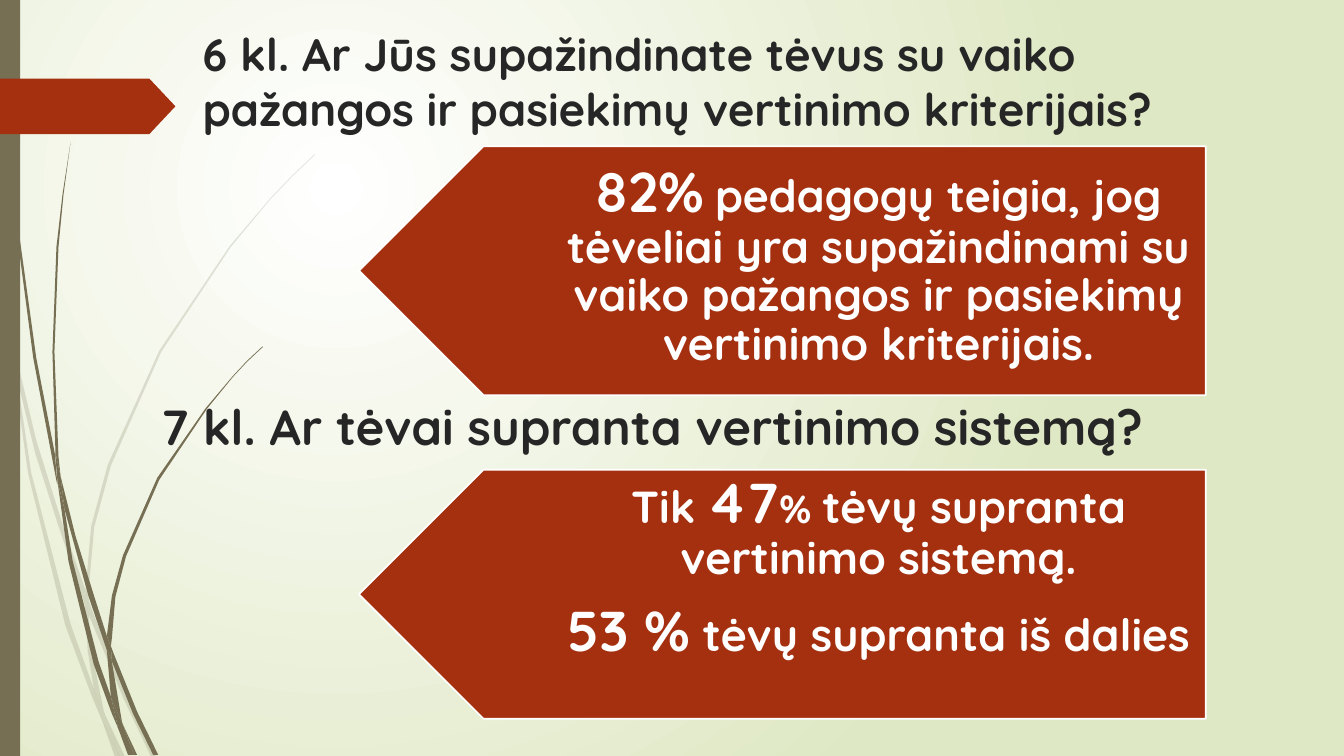
from dataclasses import dataclass

import pptx
import pptx.dml.color
import pptx.enum.shapes
import pptx.enum.text
import pptx.oxml.ns
import pptx.util
from lxml import etree

# Fine grid of square cells; every length below counts its columns and rows
COLUMNS, ROWS = 1333, 750
FONT = "Quicksand"
RUST, OLIVE, INK, WHITE = "A53010", "766F54", "262626", "FFFFFF"
SHAPES = pptx.enum.shapes.MSO_SHAPE
ALIGN = pptx.enum.text.PP_ALIGN
ANCHOR = pptx.enum.text.MSO_ANCHOR


@dataclass
class Box:
    left: float
    top: float
    width: float
    height: float


@dataclass
class TextRun:
    text: str
    size: float
    color: str = WHITE


@dataclass
class Answer:
    arrow_row: float
    text_row: float
    paragraphs: list[list[TextRun]]


@dataclass
class Tuft:
    """Grass segments, each an outline of (column, row) corners."""
    opacity: int
    segments: list[list[tuple[float, float]]]


PALE_GRASS = Tuft(20, [
    [(11, 350), (9, 322), (0, 282), (0, 299), (10, 344)],
    [(58, 522), (84, 599), (85, 586), (62, 520), (36, 437), (14, 345), (17, 376), (35, 450)],
    [(92, 607), (88, 596), (88, 610), (123, 694), (150, 751), (155, 751), (127, 692)],
    [(119, 751), (124, 751), (105, 711)],
    [(93, 683), (70, 619), (31, 469), (17, 376), (11, 350), (28, 470), (65, 621),
     (92, 693), (101, 714), (99, 707)],
    [(84, 599), (87, 646), (93, 683), (96, 692), (105, 711), (103, 706), (91, 646),
     (88, 610), (88, 608)],
    [(88, 584), (93.5, 523), (110, 462), (160, 349), (229, 245), (268, 198), (290, 175),
     (312, 154), (312, 153), (289, 175), (268, 197), (228, 244), (158, 348), (107, 461),
     (90.5, 522), (85, 584), (85, 586), (88, 596)],
    [(101, 714), (114, 751), (119, 751)],
    [(88, 608), (88, 610), (88, 596), (85, 586), (84, 599)],
    [(96, 692), (93, 683), (99, 707), (101, 714), (119, 751), (105, 711)],
])
DARK_GRASS = Tuft(100, [
    [(7, 110), (17, 233), (33, 355), (56, 477), (57, 481), (55, 457), (55, 453),
     (36, 355), (19, 232), (8, 109), (5, 48), (4, 0), (3, 0), (4, 48)],
    [(88, 592), (106, 645), (106, 633), (106, 631), (93, 590), (75, 532), (60, 472),
     (64, 505)],
    [(113, 649), (110, 641), (111, 656), (132, 708), (152, 749), (157, 749), (136, 706)],
    [(110, 691), (98, 657), (72, 556), (64, 505), (57, 477), (68, 557), (93, 659),
     (111, 708), (117, 722), (116, 717)],
    [(60, 472), (58, 453), (54, 349), (58, 245), (63, 193), (70, 141), (62, 193),
     (56, 245), (52, 349), (55, 449)],
    [(133, 749), (136, 749), (122, 719)],
    [(57, 477), (64, 505), (60, 472), (55, 449), (55, 453)],
    [(111, 633), (114.5, 592), (125, 552), (158, 476), (205, 406), (231, 374), (245, 359),
     (261, 344), (260, 344), (245, 358), (231, 373), (204, 405), (156, 474), (122, 551),
     (111, 591), (106, 631), (110, 641)],
    [(117, 722), (127, 749), (131, 749)],
    [(106, 645), (110, 691), (116, 706), (122, 719), (121, 716), (111, 656), (109, 651)],
    [(106, 645), (109, 651), (111, 656), (110, 641), (106, 631), (106, 633)],
    [(116, 706), (110, 691), (116, 717), (117, 722), (130, 749), (133, 749), (122, 719)],
])

ANSWERS = [
    Answer(145, 158, [
        [TextRun("82%", 40), TextRun(" ", 28),
         TextRun("pedagogų teigia, jog tėveliai yra supažindinami su vaiko "
                 "pažangos ir pasiekimų vertinimo kriterijais.", 32)]]),
    Answer(466, 458, [
        [TextRun("Tik ", 32), TextRun("47", 40), TextRun("% ", 28),
         TextRun("tėvų supranta vertinimo sistemą.", 32)],
        [TextRun("53 %", 40), TextRun(" tėvų supranta iš dalies", 32)]]),
]

presentation = pptx.Presentation()
presentation.slide_width = pptx.util.Inches(13.33)
presentation.slide_height = pptx.util.Inches(7.5)
slide = presentation.slides.add_slide(presentation.slide_layouts[5])


def across(columns: float) -> int:
    return round(presentation.slide_width * columns / COLUMNS)


def down(rows: float) -> int:
    return round(presentation.slide_height * rows / ROWS)


def place(box: Box) -> tuple[int, int, int, int]:
    return across(box.left), down(box.top), across(box.width), down(box.height)


def rgb(color: str) -> pptx.dml.color.RGBColor:
    return pptx.dml.color.RGBColor.from_string(color)


def paint(shape, color: str, outline: str = "") -> None:
    shape.shadow.inherit = False
    shape.fill.solid()
    shape.fill.fore_color.rgb = rgb(color)
    if outline:
        shape.line.color.rgb = rgb(outline)
        shape.line.width = pptx.util.Pt(1.25)
    else:
        shape.line.fill.background()


def draw_shape(kind, box: Box, color: str, outline: str = ""):
    shape = slide.shapes.add_shape(kind, *place(box))
    paint(shape, color, outline)
    return shape


def write_runs(paragraph, runs: list[TextRun]) -> None:
    for item in runs:
        run = paragraph.add_run()
        run.text = item.text
        run.font.name = FONT
        run.font.size = pptx.util.Pt(item.size)
        run.font.bold = True
        run.font.color.rgb = rgb(item.color)


def write_heading(shape, box: Box, text: str, size: float) -> None:
    shape.left, shape.top, shape.width, shape.height = place(box)
    frame = shape.text_frame
    frame.word_wrap = True
    frame.auto_size = pptx.enum.text.MSO_AUTO_SIZE.NONE
    frame.vertical_anchor = ANCHOR.TOP
    frame.paragraphs[0].alignment = ALIGN.LEFT
    write_runs(frame.paragraphs[0], [TextRun(text, size, INK)])


def draw_tuft(tuft: Tuft) -> None:
    for segment in tuft.segments:
        corners = [(across(column), down(row)) for column, row in segment]
        builder = slide.shapes.build_freeform(*corners[0])
        builder.add_line_segments(corners[1:])
        shape = builder.convert_to_shape()
        paint(shape, OLIVE)
        if tuft.opacity < 100:
            color = shape.element.spPr.find(".//" + pptx.oxml.ns.qn("a:srgbClr"))
            etree.SubElement(color, pptx.oxml.ns.qn("a:alpha"), val=str(tuft.opacity * 1000))


def draw_answer(answer: Answer) -> None:
    arrow = draw_shape(SHAPES.PENTAGON, Box(356, answer.arrow_row, 840, 247), RUST, WHITE)
    arrow.rotation = 180
    frame = slide.shapes.add_textbox(*place(Box(437, answer.text_row, 780, 214))).text_frame
    frame.word_wrap = True
    frame.vertical_anchor = ANCHOR.MIDDLE
    frame.margin_left, frame.margin_right = across(109), across(20)
    for index, runs in enumerate(answer.paragraphs):
        paragraph = frame.add_paragraph() if index else frame.paragraphs[0]
        paragraph.alignment = ALIGN.CENTER
        paragraph.line_spacing = 0.9
        paragraph.space_before = pptx.util.Pt(14 if index else 0)
        write_runs(paragraph, runs)


# Background: circular gradient centred in the upper left quarter
background = slide.background.fill
background.gradient()
for stop, color in zip(background.gradient_stops, (WHITE, "DFE8C4")):
    stop.color.rgb = rgb(color)
linear = slide.element.find(".//" + pptx.oxml.ns.qn("a:lin"))
gradient = linear.getparent()
gradient.remove(linear)
circle = etree.SubElement(gradient, pptx.oxml.ns.qn("a:path"))
circle.set("path", "circle")
etree.SubElement(circle, pptx.oxml.ns.qn("a:fillToRect"),
                 l="50000", t="50000", r="100000", b="100000")

# Grass, side bar and pointer
for tuft in (PALE_GRASS, DARK_GRASS):
    draw_tuft(tuft)
draw_shape(SHAPES.RECTANGLE, Box(0, 0, 20, ROWS), OLIVE)
pointer = draw_shape(SHAPES.PENTAGON, Box(0, 78, 174, 55), RUST)
pointer.adjustments[0] = 0.47

# Questions and answers
write_heading(slide.shapes.title, Box(191, 21, 975, 131),
              "6 kl. Ar Jūs supažindinate tėvus su vaiko pažangos ir pasiekimų "
              "vertinimo kriterijais?", 32.4)
for answer in ANSWERS:
    draw_answer(answer)
write_heading(slide.shapes.add_textbox(0, 0, 0, 0), Box(150, 388, 1029, 89),
              "7 kl. Ar tėvai supranta vertinimo sistemą?", 35.1)

presentation.save("out.pptx")
